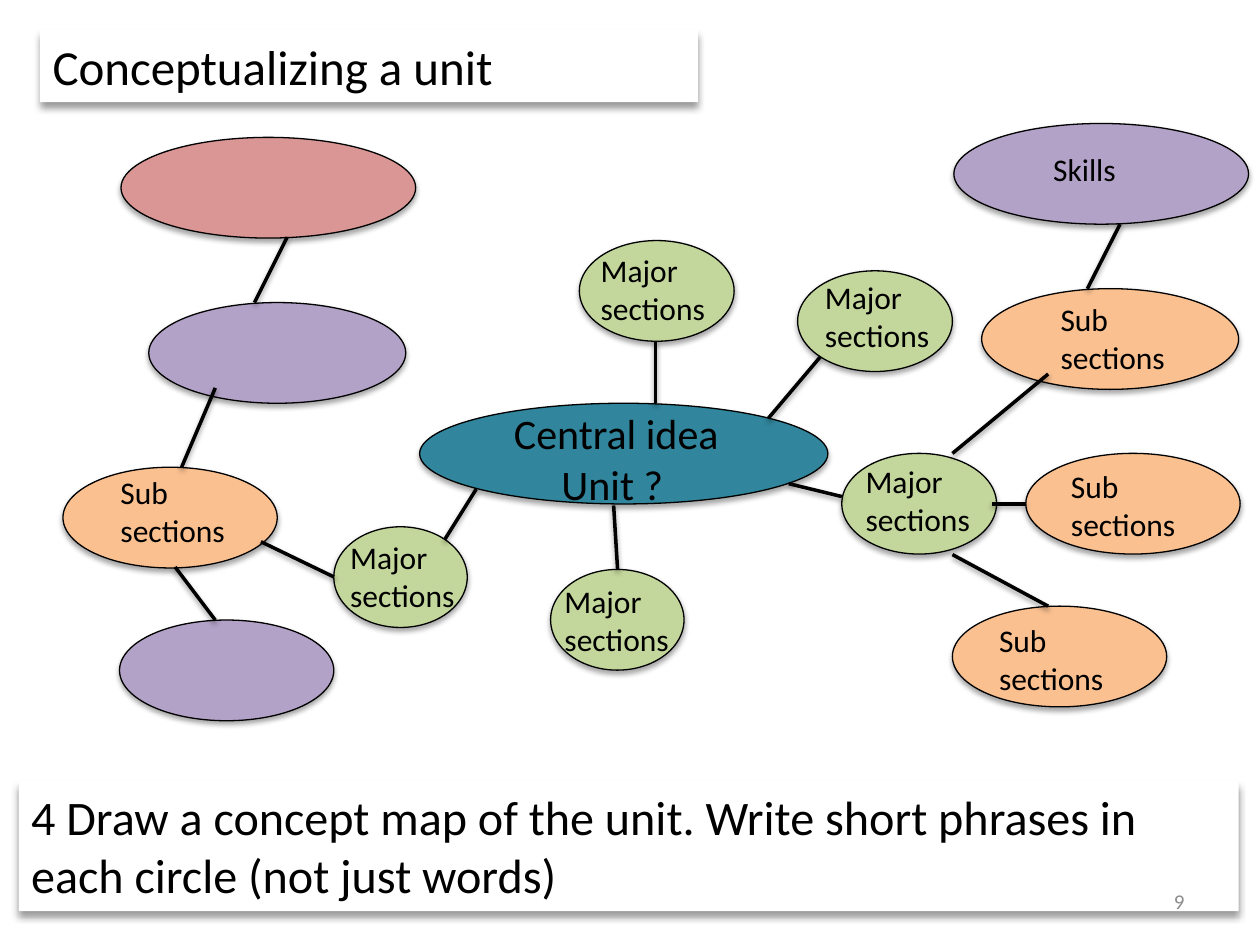
from typing import Any, NamedTuple

from lxml import etree
from pptx import Presentation
from pptx.dml.color import RGBColor
from pptx.enum.shapes import MSO_CONNECTOR, MSO_SHAPE
from pptx.enum.text import MSO_ANCHOR, PP_ALIGN
from pptx.oxml.ns import qn
from pptx.util import Cm, Pt

OVAL, RECT = MSO_SHAPE.OVAL, MSO_SHAPE.RECTANGLE
STRAIGHT = MSO_CONNECTOR.STRAIGHT
TOP, MIDDLE = MSO_ANCHOR.TOP, MSO_ANCHOR.MIDDLE
LEFT, RIGHT = PP_ALIGN.LEFT, PP_ALIGN.RIGHT

BLACK = RGBColor(0x00, 0x00, 0x00)
WHITE = RGBColor(0xFF, 0xFF, 0xFF)
GREY = RGBColor(0x8C, 0x8C, 0x8C)
TEAL = RGBColor(0x31, 0x85, 0x9C)
GREEN = RGBColor(0xC3, 0xD6, 0x9B)
ORANGE = RGBColor(0xFA, 0xC0, 0x90)
PURPLE = RGBColor(0xB3, 0xA2, 0xC7)
RED = RGBColor(0xD9, 0x96, 0x94)

NODE_HEIGHT = 2.03
LABEL_WIDTH, LABEL_HEIGHT = 2.69, 1.8
MAJOR, SUB = "Major sections", "Sub\nsections"


class Shadow(NamedTuple):
    alpha: int
    blur: float
    dist: float


class Node(NamedTuple):
    x: float
    y: float
    width: float
    fill: RGBColor
    label: str = ""
    label_x: float = 0
    label_y: float = 0


class Link(NamedTuple):
    x1: float
    y1: float
    x2: float
    y2: float


class Panel(NamedTuple):
    x: float
    y: float
    width: float
    height: float
    text: str
    size: float


NODE_SHADOW = Shadow(35, 3.1, 1.8)
LINK_SHADOW = Shadow(38, 3.1, 1.6)
PANEL_SHADOW = Shadow(40, 4, 3)

PANELS = [
    Panel(0.81, 0.61, 13.26, 1.45, "Conceptualizing a unit", 28),
    Panel(0.38, 15.75, 24.59, 2.62,
          "4 Draw a concept map of the unit. Write short phrases in "
          "each circle (not just words)", 27.5),
]

NODES = [
    Node(8.46, 8.13, 8.23, TEAL),
    Node(11.68, 4.85, 3.12, GREEN, MAJOR, 11.86, 4.93),
    Node(16.08, 5.46, 3.12, GREEN, MAJOR, 16.38, 5.49),
    Node(16.97, 9.14, 3.12, GREEN, MAJOR, 17.2, 9.19),
    Node(11.1, 11.48, 2.69, GREEN, MAJOR, 11.13, 11.61),
    Node(6.73, 10.62, 2.69, GREEN, MAJOR, 6.81, 10.72),
    Node(19.79, 5.82, 5.18, ORANGE, SUB, 21.13, 5.92),
    Node(20.68, 9.14, 4.32, ORANGE, SUB, 21.34, 9.3),
    Node(19.2, 12.22, 4.32, ORANGE, SUB, 19.89, 12.4),
    Node(1.27, 9.42, 4.32, ORANGE, SUB, 2.18, 9.42),
    Node(19.23, 2.49, 5.94, PURPLE, "Skills", 20.98, 2.9),
    Node(3, 6.1, 5.18, PURPLE),
    Node(2.41, 12.5, 4.32, PURPLE),
    Node(2.44, 2.77, 5.94, RED),
]

LINKS = [
    Link(13.21, 8.13, 13.21, 6.88),
    Link(15.49, 8.43, 16.54, 7.19),
    Link(15.9, 9.75, 16.97, 10.01),
    Link(12.37, 10.19, 12.45, 11.48),
    Link(8.97, 10.87, 9.6, 9.86),
    Link(19.2, 9.14, 21.13, 7.54),
    Link(19.99, 10.16, 20.68, 10.16),
    Link(19.2, 11.18, 21.13, 12.22),
    Link(22.58, 4.52, 21.92, 5.82),
    Link(5.26, 10.92, 6.73, 11.63),
    Link(3.66, 9.42, 4.34, 7.82),
    Link(3.53, 11.43, 4.34, 12.5),
    Link(5.79, 4.78, 5.13, 6.1),
]


def add_shadow(spPr: Any, shadow: Shadow) -> None:
    effects = spPr.find(qn("a:effectLst"))
    if effects is None:
        effects = etree.SubElement(spPr, qn("a:effectLst"))
    outer = etree.SubElement(
        effects, qn("a:outerShdw"), blurRad=str(Pt(shadow.blur)),
        dist=str(Pt(shadow.dist)), dir="5400000", rotWithShape="0")
    color = etree.SubElement(outer, qn("a:srgbClr"), val=str(BLACK))
    etree.SubElement(color, qn("a:alpha"), val=str(shadow.alpha * 1000))


def write(sp: Any, text: str, size: float, color: RGBColor = BLACK,
          align: Any = LEFT, anchor: Any = TOP) -> Any:
    tf = sp.text_frame
    tf.word_wrap = True
    tf.vertical_anchor = anchor
    font_format = {"name": "Calibri", "size": Pt(size)}
    for i, line in enumerate(text.split("\n")):
        p = tf.paragraphs[0] if i == 0 else tf.add_paragraph()
        p.alignment = align
        r = p.add_run()
        r.text = line
        for name, value in font_format.items():
            setattr(r.font, name, value)
        r.font.color.rgb = color
    return tf


def add_text(s: Any, x: float, y: float, width: float, height: float,
             text: str, size: float, **layout: Any) -> Any:
    sp = s.shapes.add_textbox(Cm(x), Cm(y), Cm(width), Cm(height))
    return write(sp, text, size, **layout)


def draw_panel(s: Any, panel: Panel) -> None:
    sp = s.shapes.add_shape(RECT, Cm(panel.x), Cm(panel.y),
                            Cm(panel.width), Cm(panel.height))
    sp.fill.solid()
    sp.fill.fore_color.rgb = WHITE
    sp.line.fill.background()
    sp.shadow.inherit = False
    add_shadow(sp._element.spPr, PANEL_SHADOW)
    write(sp, panel.text, panel.size)


def draw_node(s: Any, node: Node) -> None:
    sp = s.shapes.add_shape(OVAL, Cm(node.x), Cm(node.y),
                            Cm(node.width), Cm(NODE_HEIGHT))
    sp.fill.solid()
    sp.fill.fore_color.rgb = node.fill
    sp.line.color.rgb = BLACK
    sp.line.width = Pt(0.75)
    sp.shadow.inherit = False
    add_shadow(sp._element.spPr, NODE_SHADOW)


def draw_link(s: Any, link: Link) -> None:
    sp = s.shapes.add_connector(STRAIGHT, *(Cm(v) for v in link))
    sp.line.color.rgb = BLACK
    sp.line.width = Pt(2)
    add_shadow(sp._element.spPr, LINK_SHADOW)


def main() -> None:
    prs = Presentation()
    prs.slide_width, prs.slide_height = Cm(25.4), Cm(19.05)
    s = prs.slides.add_slide(prs.slide_layouts[6])
    for panel in PANELS:
        draw_panel(s, panel)
    for node in NODES:
        draw_node(s, node)
    for link in LINKS:
        draw_link(s, link)
    for node in NODES:
        if node.label:
            add_text(s, node.label_x, node.label_y, LABEL_WIDTH, LABEL_HEIGHT,
                     node.label, 18)
    tf = add_text(s, 10.11, 8.1, 5.21, 2.31, "Central idea\nUnit ?", 24)
    tf.paragraphs[1]._p.get_or_add_pPr().set("marL", str(Cm(0.96)))
    add_text(s, 18.21, 17.65, 5.92, 1.02, "9", 12,
             color=GREY, align=RIGHT, anchor=MIDDLE)
    prs.save("out.pptx")


if __name__ == "__main__":
    main()
